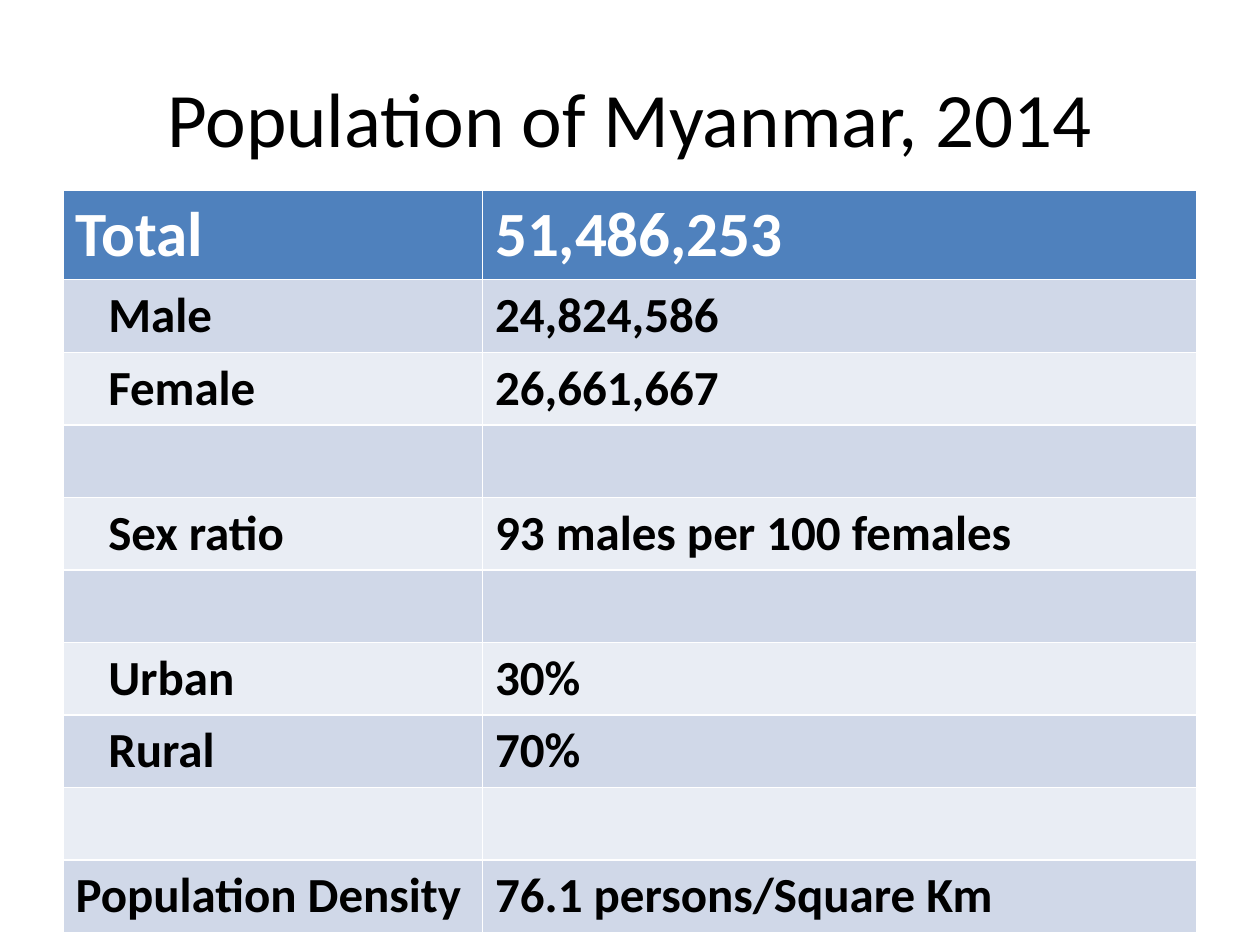
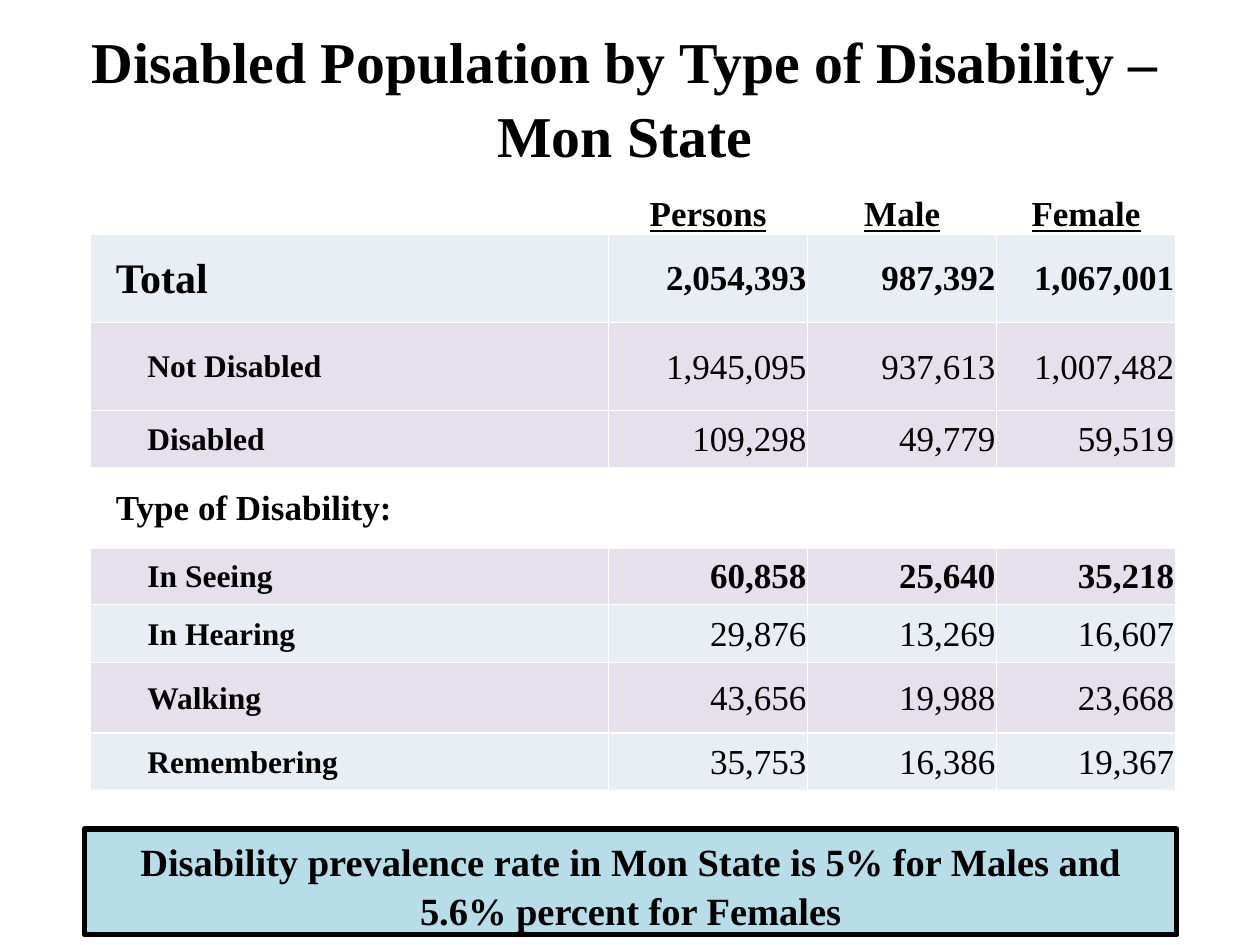
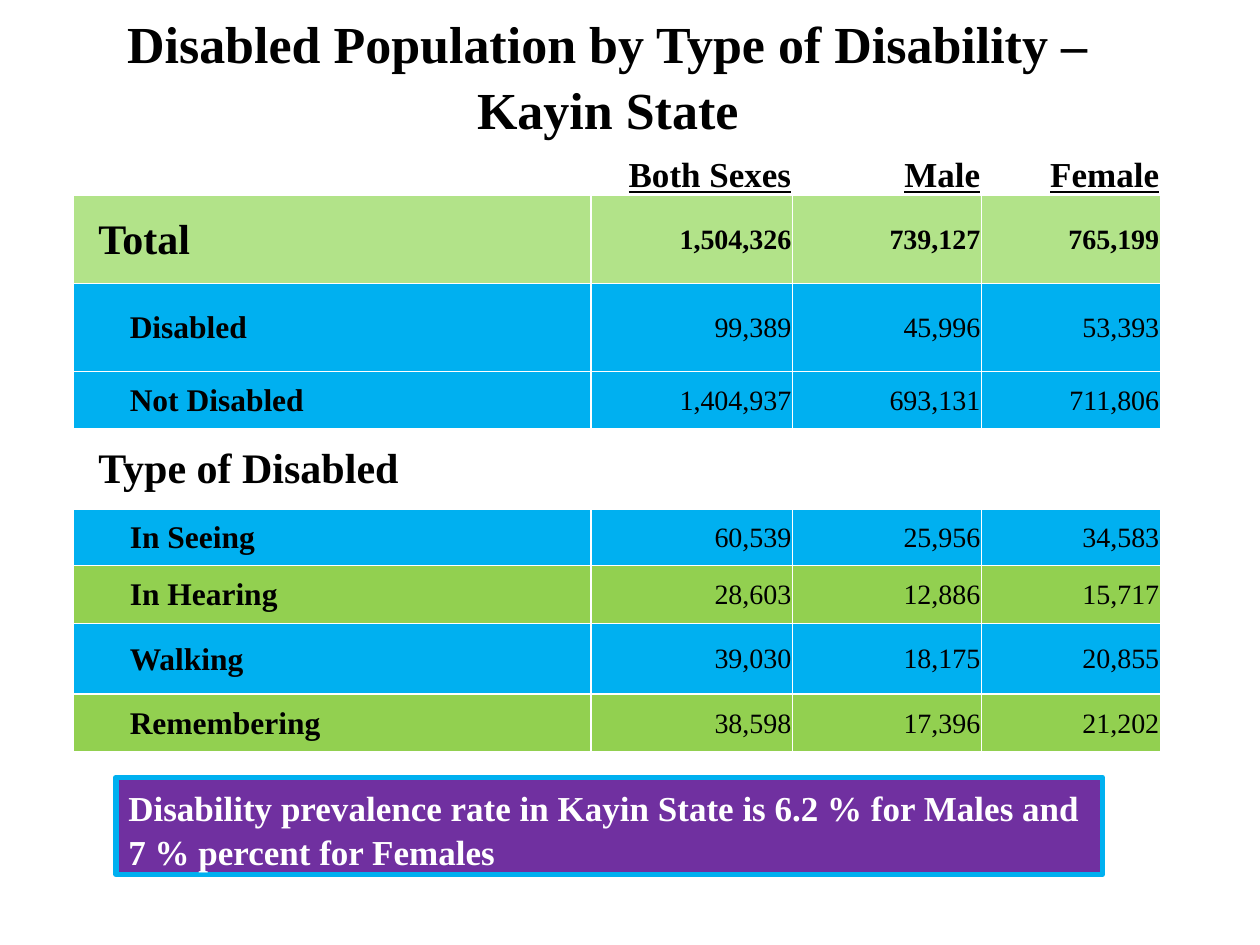
from pptx import Presentation
from pptx.dml.color import RGBColor
from pptx.enum.shapes import MSO_SHAPE as SHAPE
from pptx.enum.text import MSO_ANCHOR as ANCHOR, MSO_AUTO_SIZE as AUTO, PP_ALIGN as ALIGN
from pptx.util import Inches, Pt

BLACK = RGBColor(0x00, 0x00, 0x00)
WHITE = RGBColor(0xFF, 0xFF, 0xFF)
HEADER_BLUE = RGBColor(0x4F, 0x81, 0xBD)
BAND_DARK = RGBColor(0xD0, 0xD8, 0xE8)
BAND_LIGHT = RGBColor(0xE9, 0xED, 0xF4)
LILAC = RGBColor(0xE6, 0xE0, 0xEC)
PALE_TEAL = RGBColor(0xB7, 0xDE, 0xE8)
SKY = RGBColor(0x00, 0xB0, 0xF0)
LIME = RGBColor(0x92, 0xD0, 0x50)
PALE_LIME = RGBColor(0xB2, 0xE3, 0x89)
PURPLE = RGBColor(0x70, 0x30, 0xA0)

SANS = "Calibri"
SERIF = "Times New Roman"
COLS, ROWS = 100, 75
SERIF_LEADING = 1.06
STATE_ROWS = [3.8, 7, 7, 4.5, 6.4, 4.5, 4.6, 5.6, 4.6]

POPULATION = [
    ("Total", "51,486,253"),
    ("Male", "24,824,586"),
    ("Female", "26,661,667"),
    ("", ""),
    ("Sex ratio", "93 males per 100 females"),
    ("", ""),
    ("Urban", "30%"),
    ("Rural", "70%"),
    ("", ""),
    ("Population Density", "76.1 persons/Square Km"),
]
MON = [
    ("", "Persons", "Male", "Female"),
    ("Total", "2,054,393", "987,392", "1,067,001"),
    ("Not Disabled", "1,945,095", "937,613", "1,007,482"),
    ("Disabled", "109,298", "49,779", "59,519"),
    ("Type of Disability:", "", "", ""),
    ("In Seeing", "60,858", "25,640", "35,218"),
    ("In Hearing", "29,876", "13,269", "16,607"),
    ("Walking", "43,656", "19,988", "23,668"),
    ("Remembering", "35,753", "16,386", "19,367"),
]
KAYIN = [
    ("", "Both Sexes", "Male", "Female"),
    ("Total", "1,504,326", "739,127", "765,199"),
    ("Disabled", "99,389", "45,996", "53,393"),
    ("Not Disabled", "1,404,937", "693,131", "711,806"),
    ("Type of Disabled", "", "", ""),
    ("In Seeing", "60,539", "25,956", "34,583"),
    ("In Hearing", "28,603", "12,886", "15,717"),
    ("Walking", "39,030", "18,175", "20,855"),
    ("Remembering", "38,598", "17,396", "21,202"),
]


class Deck:
    def __init__(self):
        self.prs = Presentation()
        self.prs.slide_width, self.prs.slide_height = Inches(10), Inches(7.5)
        self.slide = None
        self.font = SANS

    def x(self, cols):
        return round(self.prs.slide_width * cols / COLS)

    def y(self, rows):
        return round(self.prs.slide_height * rows / ROWS)

    def box(self, left, top, width, height):
        return self.x(left), self.y(top), self.x(width), self.y(height)

    def new_slide(self, font):
        self.font = font
        self.slide = self.prs.slides.add_slide(self.prs.slide_layouts[5])

    def style(self, p, size, color=BLACK, bold=True, align=ALIGN.LEFT, underline=False):
        p.alignment = align
        f = p.font
        f.name, f.size, f.bold, f.underline = self.font, Pt(size), bold, underline
        f.color.rgb = color

    def title(self, text, box, size, bold=True):
        sp = self.slide.shapes.title
        sp.left, sp.top, sp.width, sp.height = self.box(*box)
        tf = sp.text_frame
        tf.text = text
        tf.auto_size = AUTO.NONE
        tf.vertical_anchor = ANCHOR.MIDDLE
        p = tf.paragraphs[0]
        self.style(p, size, bold=bold, align=ALIGN.CENTER)
        if self.font == SERIF:
            p.line_spacing = SERIF_LEADING

    def table(self, left, top, widths, heights, header=False):
        box = self.box(left, top, sum(widths), sum(heights))
        tbl = self.slide.shapes.add_table(len(heights), len(widths), *box).table
        tbl.first_row, tbl.horz_banding = header, False
        for col, width in zip(tbl.columns, widths):
            col.width = self.x(width)
        for row, height in zip(tbl.rows, heights):
            row.height = self.y(height)
        return tbl

    def cell(self, cell, text, fill, size, indent=0, anchor=ANCHOR.TOP, tight=False, **look):
        cell.fill.solid()
        cell.fill.fore_color.rgb = fill
        cell.vertical_anchor = anchor
        if tight:
            cell.margin_left = cell.margin_right = cell.margin_top = Inches(0.01)
            cell.margin_bottom = 0
        cell.text = text
        p = cell.text_frame.paragraphs[0]
        if indent:
            p._p.get_or_add_pPr().set("marL", str(self.x(indent)))
        self.style(p, size, **look)

    def population_table(self, rows):
        tbl = self.table(5, 15.08, [33.3, 56.7], [6.9] + [5.7] * (len(rows) - 1), header=True)
        for r, texts in enumerate(rows):
            band = BAND_DARK if r % 2 else BAND_LIGHT
            fill, size, color = (band, 28, BLACK) if r else (HEADER_BLUE, 36, WHITE)
            for c, text in enumerate(texts):
                inner = c == 0 and 0 < r < len(rows) - 1
                self.cell(tbl.cell(r, c), text, fill, size, 2.6 if inner else 0, color=color)

    def state_table(self, rows, left, top, first_number, fills, size, section_size,
                    head_align, bold_rows):
        tbl = self.table(left, top, [41.1, first_number, 15, 14.2], STATE_ROWS)
        label_sizes = {1: 24, 4: section_size}
        for r, (texts, fill) in enumerate(zip(rows, fills)):
            indent = 1.9 if r in label_sizes else 4.4
            self.cell(tbl.cell(r, 0), texts[0], fill, label_sizes.get(r, 18), indent,
                      ANCHOR.MIDDLE, tight=True)
            for c, text in enumerate(texts[1:], 1):
                if r == 0:
                    self.cell(tbl.cell(r, c), text, fill, 20, anchor=ANCHOR.BOTTOM,
                              tight=True, align=head_align, underline=True)
                else:
                    self.cell(tbl.cell(r, c), text, fill, size, anchor=ANCHOR.MIDDLE,
                              tight=True, align=ALIGN.RIGHT, bold=r in bold_rows)

    def callout(self, lines, box, fill, line, size, color, align):
        sp = self.slide.shapes.add_shape(SHAPE.RECTANGLE, *self.box(*box))
        sp.shadow.inherit = False
        sp.fill.solid()
        sp.fill.fore_color.rgb = fill
        sp.line.color.rgb = line
        sp.line.width = Pt(3)
        tf = sp.text_frame
        tf.word_wrap = True
        tf.vertical_anchor = ANCHOR.TOP
        tf.text = "\n".join(lines)
        for p in tf.paragraphs:
            self.style(p, size, color, align=align)
            p.line_spacing = SERIF_LEADING


def main():
    deck = Deck()

    deck.new_slide(SANS)
    deck.title("Population of Myanmar, 2014", (5, 3, 90, 12.5), 44, bold=False)
    deck.population_table(POPULATION)

    deck.new_slide(SERIF)
    deck.title("Disabled Population by Type of Disability – Mon State",
               (2.5, 1.7, 94.2, 11.7), 33)
    deck.state_table(
        MON, 7.2, 14.8, 15.8,
        [WHITE, BAND_LIGHT, LILAC, LILAC, WHITE] + [LILAC, BAND_LIGHT] * 2,
        20, 20, ALIGN.CENTER, {1, 5})
    deck.callout(["Disability prevalence rate in Mon State is 5% for Males and",
                  "5.6% percent for Females"],
                 (6.7, 65.8, 86.7, 8.4), PALE_TEAL, BLACK, 22, BLACK, ALIGN.CENTER)

    deck.new_slide(SERIF)
    deck.title("Disabled Population by Type of Disability – Kayin State",
               (6.7, 0, 83.1, 11.7), 29.7)
    deck.state_table(
        KAYIN, 5.8, 11.7, 16,
        [WHITE, PALE_LIME, SKY, SKY, WHITE] + [SKY, LIME] * 2,
        16, 24, ALIGN.RIGHT, {1})
    deck.callout(["Disability prevalence rate in Kayin State is 6.2 % for Males and",
                  "7 % percent for Females"],
                 (9.2, 61.7, 78.3, 7.7), PURPLE, SKY, 20, WHITE, ALIGN.LEFT)

    deck.prs.save("out.pptx")


if __name__ == "__main__":
    main()
